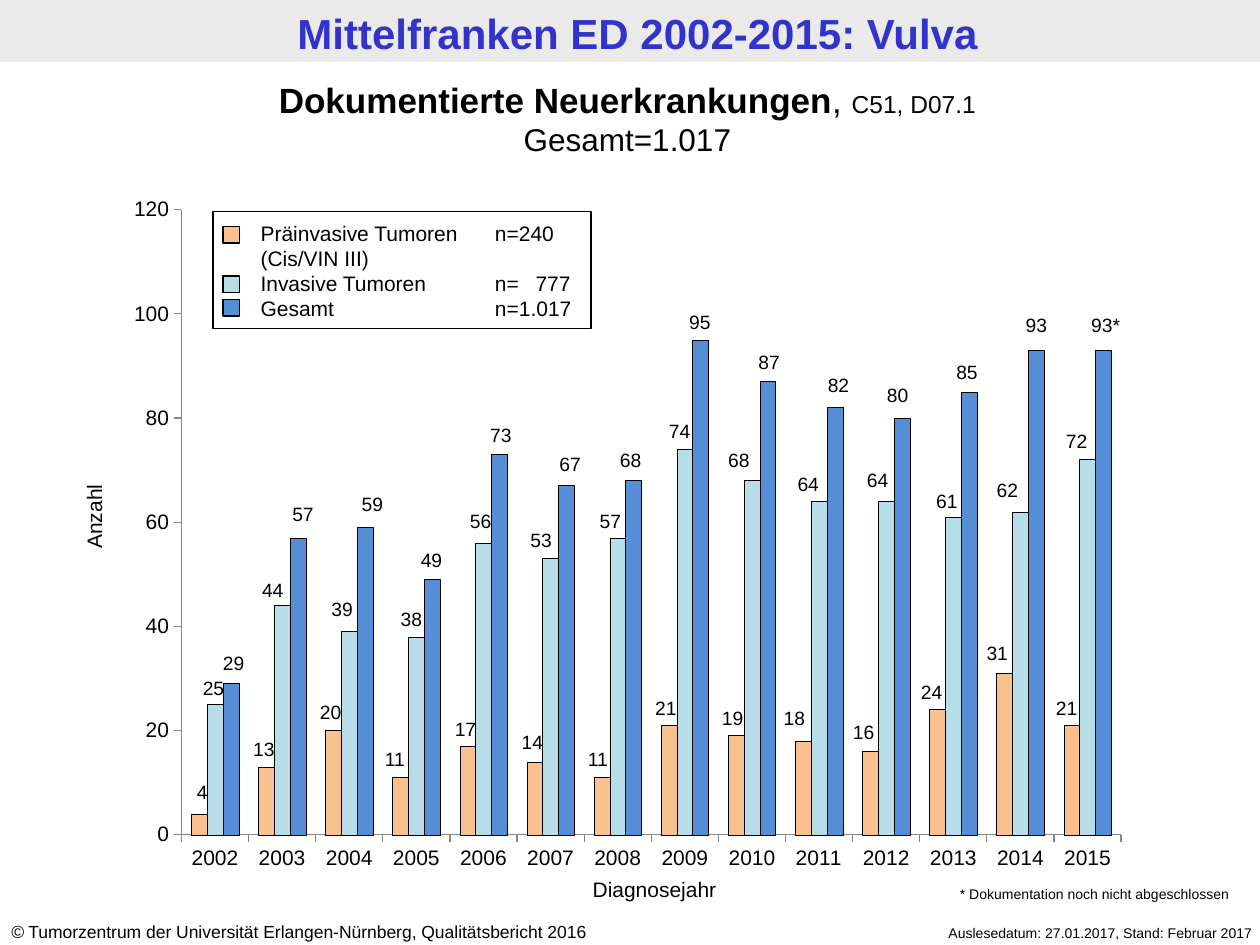
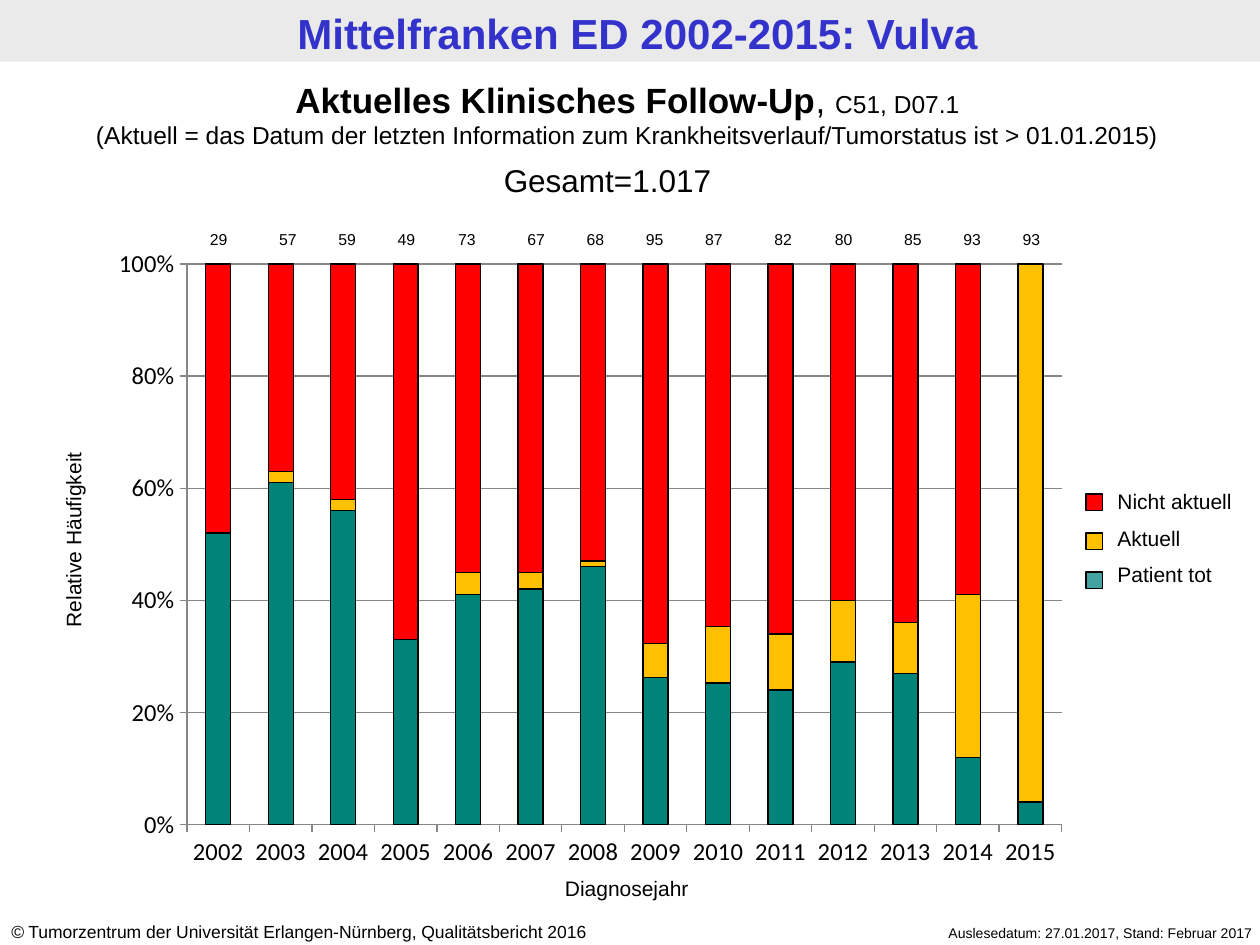
from dataclasses import dataclass

from pptx import Presentation, util as u
from pptx.chart.data import CategoryChartData
from pptx.dml.color import RGBColor
from pptx.enum import chart as ch, shapes, text
from pptx.oxml import parse_xml
from pptx.oxml.ns import nsdecls, qn

LEFT, MID, RIGHT = text.PP_ALIGN.LEFT, text.PP_ALIGN.CENTER, text.PP_ALIGN.RIGHT
CELL = u.Inches(0.1)  # the slide is a grid of 100 columns and 75 rows
COLS, ROWS = 100, 75


@dataclass(frozen=True)
class Theme:
    face: str = "Arial"
    plain: str = "Calibri"
    ink: str = "000000"
    paper: str = "FFFFFF"
    band: str = "EAEAEA"
    title: str = "3333CC"
    axis: str = "868686"
    peach: str = "FAC090"
    sky: str = "B7DEE8"
    blue: str = "558ED5"
    teal: str = "008378"
    mist: str = "008380"
    gold: str = "FFC000"
    red: str = "FF0000"
    head: int = 24
    topic: int = 20
    total: int = 18
    sub: int = 14
    body: int = 12
    mark: int = 11
    foot: int = 10
    count: int = 9
    note: int = 8


T = Theme()


def cells(*vals):
    return [round(v * CELL) for v in vals]


def tint(hue):
    return RGBColor.from_string(hue)


class Deck:
    """Holds the style and the current slide."""

    def __init__(self):
        self.prs = Presentation()
        self.prs.slide_width, self.prs.slide_height = cells(COLS, ROWS)

    def page(self):
        """Start a slide with the title band and the footers."""
        self.slide = self.prs.slides.add_slide(self.prs.slide_layouts[6])
        self.box((0, 0, COLS, 4.9), T.band, edge=None)
        self.text((0.6, 0.1, COLS, 4.9), ["Mittelfranken ED 2002-2015: Vulva"],
                  T.head, MID, hue=T.title, bold=True)
        owner = " Tumorzentrum der Universität Erlangen-Nürnberg, Qualitätsbericht 2016"
        self.text((-0.1, 72.6, 52.4, 2.7), [[("©", {"italic": True}), (owner, {})]], T.foot)
        self.text((66.5, 72.9, 33.9, 2.4),
                  ["Auslesedatum: 27.01.2017, Stand: Februar 2017"], T.note, RIGHT)

    def box(self, at, fill=None, edge=T.ink, alpha=None):
        shape = self.slide.shapes.add_shape(shapes.MSO_SHAPE.RECTANGLE, *cells(*at))
        shape.shadow.inherit = False
        if fill:
            shape.fill.solid()
            shape.fill.fore_color.rgb = tint(fill)
        else:
            shape.fill.background()
        if edge:
            shape.line.color.rgb = tint(edge)
            shape.line.width = u.Pt(0.75)
        else:
            shape.line.fill.background()
        if alpha:
            hue = shape.fill._xPr.find(".//" + qn("a:srgbClr"))
            hue.append(parse_xml(f'<a:alpha {nsdecls("a")} val="{alpha * 1000}"/>'))

    def text(self, at, paras, size, align=LEFT, hue=T.ink, bold=False,
             gap=0, tabs=(), turn=0):
        """Each paragraph is a string or a list of (words, font changes)."""
        shape = self.slide.shapes.add_textbox(*cells(*at))
        shape.rotation = turn
        frame = shape.text_frame
        frame.word_wrap = True
        for i, parts in enumerate(paras):
            para = frame.paragraphs[0] if i == 0 else frame.add_paragraph()
            para.alignment = align
            if i and gap:
                para.space_before = u.Pt(gap)
            if tabs:
                stops = "".join(f'<a:tab pos="{round(pos * CELL)}" algn="{side}"/>'
                                for pos, side in tabs)
                para._p.get_or_add_pPr().append(
                    parse_xml(f'<a:tabLst {nsdecls("a")}>{stops}</a:tabLst>'))
            font = para.font
            font.name, font.size, font.bold = T.face, u.Pt(size), bold
            font.color.rgb = tint(hue)
            for words, change in [(parts, {})] if isinstance(parts, str) else parts:
                run = para.add_run()
                run.text = words
                for key, val in change.items():
                    setattr(run.font, key, val)

    def heading(self, topic, second, size):
        """Topic line with the diagnosis codes, and a line below it."""
        codes = [(topic, {"bold": True}), (", ", {}), ("C51, D07.1", {"size": u.Pt(T.sub)})]
        self.text((-0.4, 5.7, 100.4, 7.4),
                  [codes, [(second, {"size": u.Pt(size)})]], T.topic, MID)

    def swatch(self, left, top, fill, alpha=None):
        self.box((left, top, 1.3, 1.3), fill, alpha=alpha)

    def chart(self, at, kind, rows, area, font, size, gap, edge, lap=0):
        """Column chart; area is the plot's left, top, width and height as shares."""
        data = CategoryChartData()
        data.categories = YEARS
        for name, vals, _ in rows:
            data.add_series(name, vals)
        chart = self.slide.shapes.add_chart(kind, *cells(*at), data).chart
        chart.has_legend = chart.has_title = False
        chart.font.name, chart.font.size = font, u.Pt(size)
        chart.font.color.rgb = tint(T.ink)
        plot = chart.plots[0]
        plot.gap_width, plot.overlap, plot.vary_by_categories = gap, lap, False
        for item, (_, _, hue) in zip(plot.series, rows):
            item.format.fill.solid()
            item.format.fill.fore_color.rgb = tint(hue)
            item.format.line.color.rgb = tint(T.ink)
            item.format.line.width = u.Pt(edge)
        for axis in (chart.category_axis, chart.value_axis):
            axis.major_tick_mark = ch.XL_TICK_MARK.OUTSIDE
            axis.minor_tick_mark = ch.XL_TICK_MARK.NONE
            axis.has_major_gridlines = False
            axis.format.line.color.rgb = tint(T.axis)
            axis.format.line.width = u.Pt(0.75)
        self.place(chart, area)
        return chart.value_axis

    def place(self, chart, area):
        """Fix the inner plot area."""
        host = chart.element.find(".//" + qn("c:plotArea"))
        for old in host.findall(qn("c:layout")):
            host.remove(old)
        spots = "".join(f'<c:{tag}Mode val="edge"/>' for tag in "xy")
        spots += "".join(f'<c:{tag} val="{val}"/>' for tag, val in zip("xywh", area))
        host.insert(0, parse_xml(
            f'<c:layout {nsdecls("c")}><c:manualLayout><c:layoutTarget val="inner"/>'
            f'{spots}</c:manualLayout></c:layout>'))


# Data
YEARS = [str(year) for year in range(2002, 2016)]
TOTALS = [29, 57, 59, 49, 73, 67, 68, 95, 87, 82, 80, 85, 93, 93]
CASES = [
    ("Präinvasive Tumoren", [4, 13, 20, 11, 17, 14, 11, 21, 19, 18, 16, 24, 31, 21], T.peach),
    ("Invasive Tumoren", [25, 44, 39, 38, 56, 53, 57, 74, 68, 64, 64, 61, 62, 72], T.sky),
    ("Gesamt", TOTALS, T.blue),
]
STATES = [
    ("Patient tot", [52, 61, 56, 33, 41, 42, 46, 26, 25, 24, 29, 27, 12, 4], T.teal),
    ("Aktuell", [0, 2, 2, 0, 4, 3, 1, 6, 10, 10, 11, 9, 29, 96], T.gold),
    ("Nicht aktuell", [48, 37, 42, 67, 55, 55, 53, 67, 64, 66, 60, 64, 59, 0], T.red),
]

# Value labels of the cases chart: width, left columns, top rows
MARKS = [
    (5.3, [13.4, 18.3, 23.6, 28.7, 34.3, 39.6, 44.8, 50.2, 55.5, 60.4, 65.9, 71.3, 76.5, 82],
     [61.4, 58, 55.1, 58.8, 56.4, 57.5, 58.8, 54.8, 55.6, 55.6, 56.7, 53.5, 50.4, 54.8]),
    (6.3, [13.8, 18.5, 24, 29.5, 35, 39.8, 45.3, 50.8, 55.5, 61, 66.5, 72, 76.8, 82.3],
     [53.2, 45.4, 46.9, 47.7, 39.9, 41.4, 39.9, 32.8, 35.1, 37, 36.7, 38.3, 37.5, 33.6]),
    (6.3, [15.4, 20.9, 26.4, 31.1, 36.6, 42.1, 46.9, 52.4, 57.9, 63.4, 68.1, 73.6, 79.1, 84.6],
     [51.2, 39.4, 38.6, 43, 33.1, 35.4, 35.1, 24.1, 27.3, 29.1, 29.9, 28.1, 24.4, 24.4]),
]
# Left columns of the yearly totals above the follow-up chart
HEADS = [14.6, 20.1, 24.8, 29.5, 34.3, 39.8, 44.5, 49.2, 53.9, 59.4, 64.2, 69.7, 74.4, 79.1]


def cases(deck):
    deck.page()
    axis = deck.chart((9.1, 14.7, 81.6, 55.5), ch.XL_CHART_TYPE.COLUMN_CLUSTERED, CASES,
                      (0.065, 0.035, 0.914, 0.894), T.face, T.body, 124, 0.25)
    axis.minimum_scale, axis.maximum_scale, axis.major_unit = 0, 120, 20
    deck.heading("Dokumentierte Neuerkrankungen", "Gesamt=1.017", T.total)
    deck.text((36.6, 69.1, 30.7, 3), ["Diagnosejahr"], T.body, MID)
    deck.text((-5.6, 39.5, 26.1, 3), ["Anzahl"], T.body, MID, turn=270)

    # Legend
    deck.text((19.7, 17, 27.3, 9.1),
              ["Präinvasive Tumoren\tn=\t240 (Cis/VIN III)",
               "Invasive Tumoren\t\tn=\t777", "Gesamt\t\tn=\t1.017"], T.body,
              tabs=[(14.7, "l"), (18.6, "l"), (24.6, "r"), (44.1, "l")])
    deck.box((16.9, 16.8, 30, 9.3))
    for top, (_, _, hue) in zip((18, 21.9, 23.8), CASES):
        deck.swatch(17.7, top, hue)

    # Value labels; the last total carries the footnote star
    for (_, vals, _), (wide, lefts, tops) in zip(CASES, MARKS):
        for i, (val, left, top) in enumerate(zip(vals, lefts, tops)):
            star = "*" if vals is TOTALS and i == len(vals) - 1 else ""
            deck.text((left, top, wide, 2.9), [f"{val}{star}"], T.mark, MID)
    deck.text((75.2, 69.8, 27, 2.4), ["* Dokumentation noch nicht abgeschlossen"], T.note)


def follow(deck):
    deck.page()
    axis = deck.chart((7.9, 18.7, 78, 51.1), ch.XL_CHART_TYPE.COLUMN_STACKED_100, STATES,
                      (0.089, 0.044, 0.89, 0.871), T.plain, T.sub, 150, 0.75, lap=100)
    axis.minimum_scale, axis.maximum_scale, axis.major_unit = 0, 1, 0.2
    axis.tick_labels.number_format = "0%"
    axis.tick_labels.number_format_is_linked = False
    axis.has_major_gridlines = True
    axis.major_gridlines.format.line.color.rgb = tint(T.axis)
    axis.major_gridlines.format.line.width = u.Pt(0.75)
    deck.text((-6.2, 41.3, 24.1, 3.1), ["Relative Häufigkeit"], T.body, MID, turn=270)
    deck.text((38.5, 69, 22.5, 3.1), ["Diagnosejahr"], T.body, MID)
    deck.heading("Aktuelles Klinisches Follow-Up",
                 "(Aktuell = das Datum der letzten Information zum "
                 "Krankheitsverlauf/Tumorstatus ist > 01.01.2015)", T.sub)
    deck.text((39, 12.3, 22, 4), ["Gesamt=1.017"], T.total)

    # Legend, top state first
    deck.text((87.7, 38.3, 14.2, 9.1), [name for name, _, _ in reversed(STATES)],
              T.body, gap=6.5)
    for top, hue, alpha in ((39.2, T.red, None), (42.3, T.gold, None), (45.4, T.mist, 74)):
        deck.swatch(86.2, top, hue, alpha)

    # Yearly totals
    for left, total in zip(HEADS, TOTALS):
        deck.text((left, 17.7, 5.5, 2.5), [str(total)], T.count, MID)


def main():
    deck = Deck()
    cases(deck)
    follow(deck)
    deck.prs.save("out.pptx")


if __name__ == "__main__":
    main()
